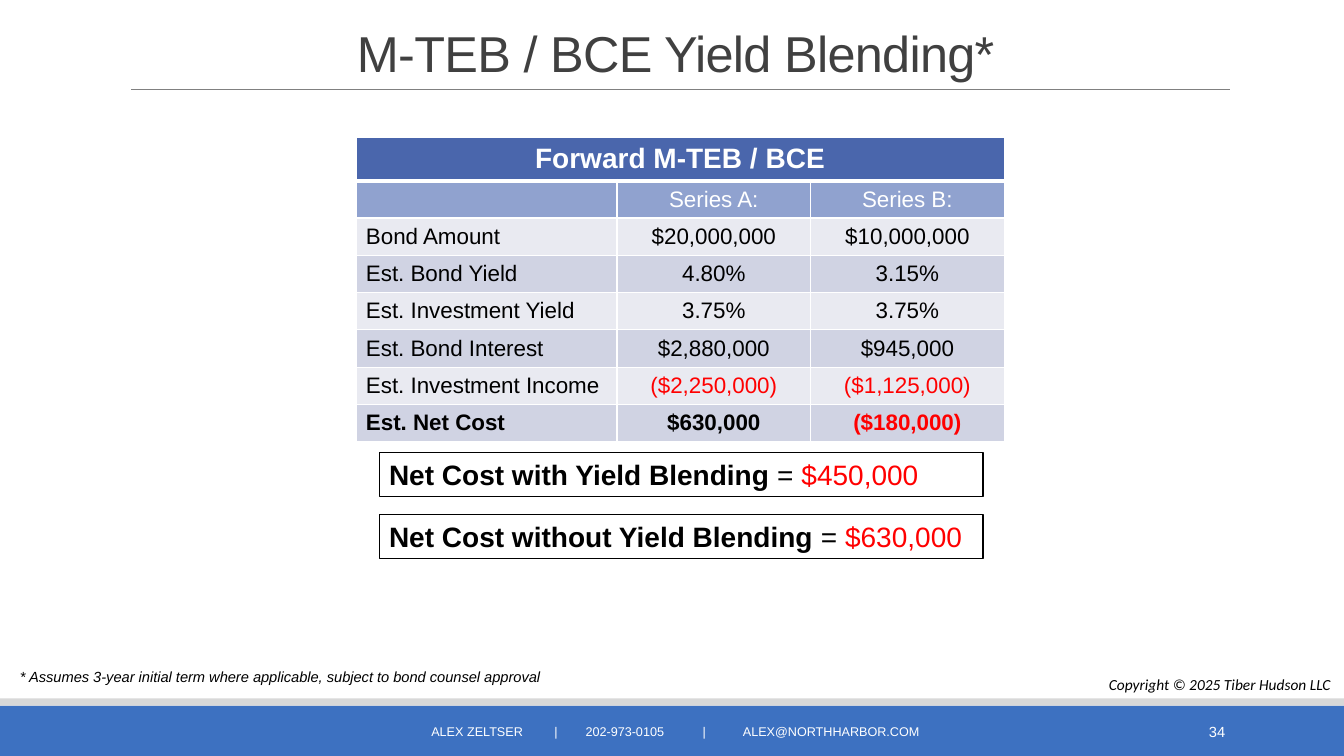
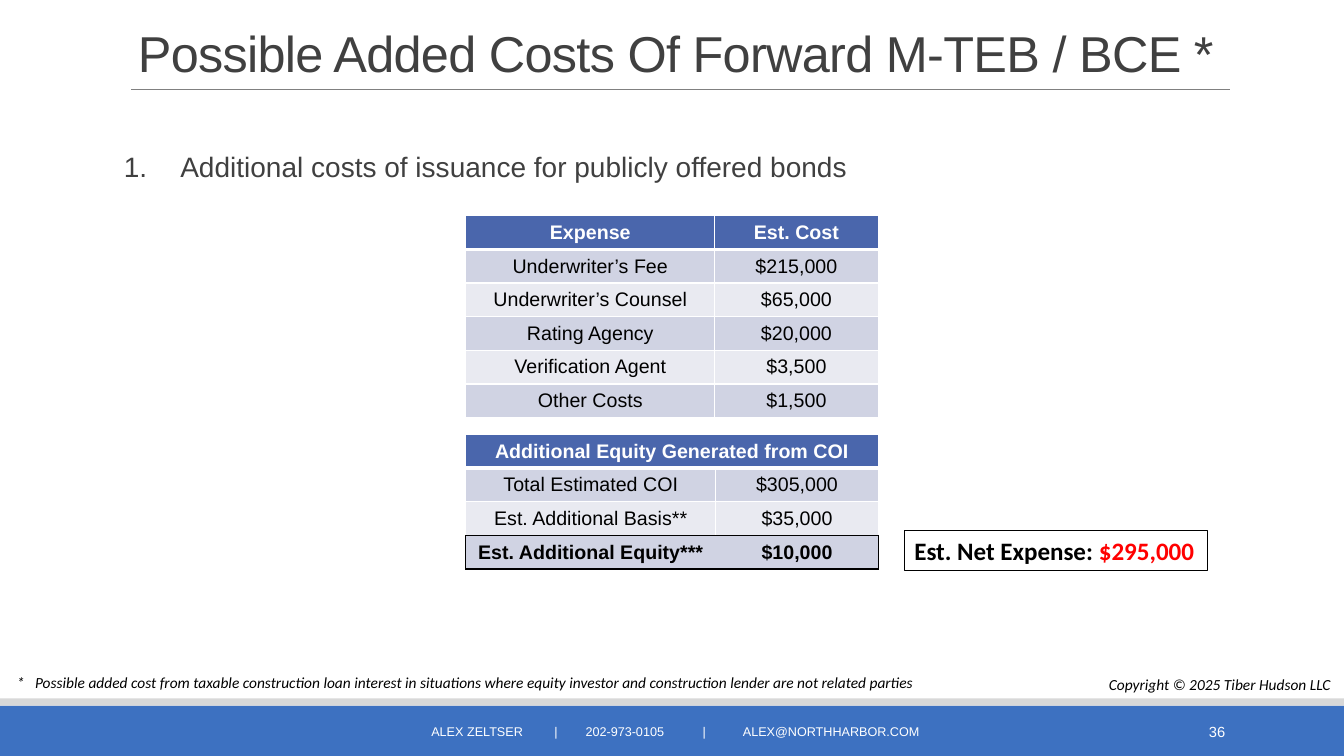
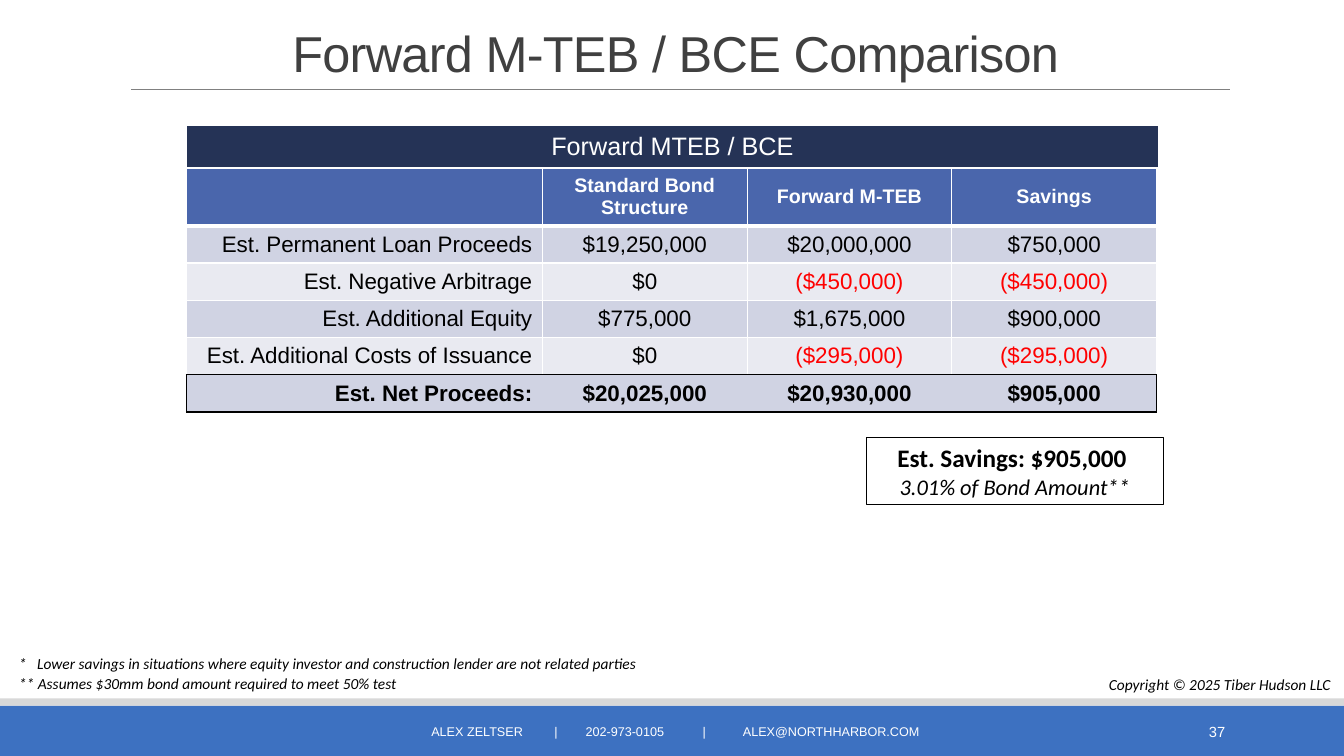
from lxml.etree import SubElement
from pptx import Presentation
from pptx.dml.color import RGBColor
from pptx.enum.shapes import MSO_CONNECTOR, MSO_SHAPE
from pptx.enum.text import MSO_ANCHOR, PP_ALIGN
from pptx.oxml.ns import qn
from pptx.util import Inches, Pt

COLORS = {
    "band": "3D71C1", "strip": "D8D8D8", "rule": "808080", "title": "404040",
    "black": "000000", "white": "FFFFFF", "red": "FF0000", "navy": "253356",
    "head": "4A66AC", "sub": "90A2CF", "dark": "D0D3E3", "light": "E9EAF1",
}
ALIGN = {"l": PP_ALIGN.LEFT, "c": PP_ALIGN.CENTER, "r": PP_ALIGN.RIGHT}

CONTACT = "ALEX ZELTSER\t|\t202-973-0105\t|\tALEX@NORTHHARBOR.COM"
CONTACT_TABS = [1.22, 1.53, 2.69, 3.09]
COPYRIGHT = "Copyright © 2025 Tiber Hudson LLC"

ARIAL_20 = {"name": "Arial", "size": 20}
NOTE = {"name": "Calibri", "size": 11, "italic": True}
ARIAL_NOTE = {"name": "Arial", "size": 10.5, "italic": True}
CALLOUT = {"name": "Calibri", "size": 18, "bold": True}
EXPENSE = {**CALLOUT, "size": 17.9}


def net_cost(label, amount):
    return [[(label, {**ARIAL_20, "bold": True}), (" = ", ARIAL_20),
             (amount, {**ARIAL_20, "color": "red"})]]


SLIDES = [
    {
        "title": "M-TEB / BCE Yield Blending*",
        "number": "34",
        "tables": [{
            "at": (3.53, 1.36), "cols": [2.59, 1.92, 1.92],
            "heights": (0.43, 0.37), "sizes": (20, 16),
            "first": "l", "span": True, "sub": True, "total": True,
            "rows": [
                ("Forward M-TEB / BCE", "", ""),
                ("", "Series A:", "Series B:"),
                ("Bond Amount", "$20,000,000", "$10,000,000"),
                ("Est. Bond Yield", "4.80%", "3.15%"),
                ("Est. Investment Yield", "3.75%", "3.75%"),
                ("Est. Bond Interest", "$2,880,000", "$945,000"),
                ("Est. Investment Income", "($2,250,000)", "($1,125,000)"),
                ("Est. Net Cost", "$630,000", "($180,000)"),
            ],
        }],
        "boxes": [
            ((3.76, 4.49, 5.99, 0.44), "l",
             net_cost("Net Cost with Yield Blending", "$450,000")),
            ((3.76, 5.1, 5.99, 0.44), "l",
             net_cost("Net Cost without Yield Blending", "$630,000")),
        ],
        "notes": [(0.1, 6.58, ARIAL_NOTE,
                   "* Assumes 3-year initial term where applicable, subject to bond counsel approval")],
    },
    {
        "title": "Possible Added Costs Of Forward M-TEB / BCE *",
        "number": "36",
        "item": "Additional costs of issuance for publicly offered bonds",
        "tables": [
            {
                "at": (4.62, 2.14), "cols": [2.47, 1.62],
                "heights": (0.33, 0.33), "sizes": (14, 14), "first": "c",
                "rows": [
                    ("Expense", "Est. Cost"),
                    ("Underwriter’s Fee", "$215,000"),
                    ("Underwriter’s Counsel", "$65,000"),
                    ("Rating Agency", "$20,000"),
                    ("Verification Agent", "$3,500"),
                    ("Other Costs", "$1,500"),
                ],
            },
            {
                "at": (4.62, 4.31), "cols": [2.48, 1.61],
                "heights": (0.33, 0.33), "sizes": (14, 14), "first": "c",
                "span": True, "total": True, "boxed": True,
                "rows": [
                    ("Additional Equity Generated from COI", ""),
                    ("Total Estimated COI", "$305,000"),
                    ("Est. Additional Basis**", "$35,000"),
                    ("Est. Additional Equity***", "$10,000"),
                ],
            },
        ],
        "boxes": [((8.97, 5.26, 3.01, 0.4), "l",
                   [[("Est. Net Expense: ", EXPENSE),
                     ("$295,000", {**EXPENSE, "color": "red"})]])],
        "notes": [(0.07, 6.63, NOTE,
                   "*\tPossible added cost from taxable construction loan interest in situations "
                   "where equity investor and construction lender are not related parties")],
    },
    {
        "title": "Forward M-TEB / BCE Comparison",
        "number": "37",
        "tables": [
            {
                "at": (1.85, 1.25), "cols": [9.64], "heights": (0.41, 0.41),
                "sizes": (18, 18), "first": "c", "banner": True,
                "rows": [("Forward MTEB / BCE",)],
            },
            {
                "at": (1.85, 1.67), "cols": [3.53, 2.03, 2.03, 2.03],
                "heights": (0.57, 0.37), "sizes": (14, 16),
                "first": "r", "total": True, "boxed": True,
                "rows": [
                    ("", "Standard Bond Structure", "Forward M-TEB", "Savings"),
                    ("Est. Permanent Loan Proceeds", "$19,250,000", "$20,000,000", "$750,000"),
                    ("Est. Negative Arbitrage", "$0", "($450,000)", "($450,000)"),
                    ("Est. Additional Equity", "$775,000", "$1,675,000", "$900,000"),
                    ("Est. Additional Costs of Issuance", "$0", "($295,000)", "($295,000)"),
                    ("Est. Net Proceeds:", "$20,025,000", "$20,930,000", "$905,000"),
                ],
            },
        ],
        "boxes": [((8.59, 4.34, 2.95, 0.67), "c",
                   [[("Est. Savings: $905,000 ", CALLOUT)],
                    [("3.01% of Bond Amount**",
                      {"name": "Calibri", "size": 16, "italic": True})]])],
        "notes": [
            (0.09, 6.44, NOTE, "*\tLower savings in situations where equity investor "
                               "and construction lender are not related parties"),
            (0.09, 6.64, NOTE, "** Assumes $30mm bond amount required to meet 50% test"),
        ],
    },
]


def rgb(name):
    return RGBColor.from_string(COLORS[name])


def add_run(p, text, fmt):
    r = p.add_run()
    r.text = text
    values = {"color": "black", **fmt}
    r.font.color.rgb = rgb(values.pop("color"))
    for key, value in values.items():
        setattr(r.font, key, Pt(value) if key == "size" else value)
    return r


def write(tf, paragraphs, align="l"):
    for i, runs in enumerate(paragraphs):
        p = tf.add_paragraph() if i else tf.paragraphs[0]
        p.alignment = ALIGN[align]
        for text, fmt in runs:
            add_run(p, text, fmt)
    return tf.paragraphs[0]


def add_text(s, at, text, fmt, align="l", anchor=MSO_ANCHOR.TOP, wrap=True):
    tf = s.shapes.add_textbox(*map(Inches, at)).text_frame
    tf.word_wrap = wrap
    tf.vertical_anchor = anchor
    return write(tf, [[(text, fmt)]], align)


def hang(p, indent):
    pPr = p._p.get_or_add_pPr()
    pPr.set("marL", str(Inches(indent)))
    pPr.set("indent", str(-Inches(indent)))
    return pPr


def add_tabs(p, stops):
    tabs = SubElement(p._p.get_or_add_pPr(), qn("a:tabLst"))
    for stop in stops:
        SubElement(tabs, qn("a:tab"), pos=str(Inches(stop)), algn="l")


def add_rect(s, at, fill=None, line=None):
    sp = s.shapes.add_shape(MSO_SHAPE.RECTANGLE, *map(Inches, at))
    sp.shadow.inherit = False
    if fill:
        sp.fill.solid()
        sp.fill.fore_color.rgb = rgb(fill)
    else:
        sp.fill.background()
    if line:
        sp.line.color.rgb = rgb(line)
        sp.line.width = Pt(0.75)
    else:
        sp.line.fill.background()
    return sp


def add_frame(s, title, number):
    add_rect(s, (0, 7, 13.33, 0.5), "band")
    add_rect(s, (0, 6.93, 13.33, 0.07), "strip")
    rule = s.shapes.add_connector(MSO_CONNECTOR.STRAIGHT, Inches(1.3), Inches(0.89),
                                  Inches(12.2), Inches(0.89))
    rule.line.color.rgb = rgb("rule")
    rule.line.width = Pt(0.5)
    SubElement(rule._element.spPr, qn("a:effectLst"))

    p = add_text(s, (1.2, 0.31, 11, 0.52), title,
                 {"name": "Arial", "size": 36, "color": "title"}, "c", MSO_ANCHOR.MIDDLE)
    p.line_spacing = 0.85
    p.runs[0]._r.get_or_add_rPr().set("spc", "-50")

    small = {"name": "Arial", "color": "white"}
    add_text(s, (10.82, 7.06, 1.43, 0.4), number, {**small, "size": 10.5}, "r", MSO_ANCHOR.MIDDLE)
    p = add_text(s, (4.18, 7.06, 5.27, 0.4), CONTACT, {**small, "size": 9},
                 anchor=MSO_ANCHOR.MIDDLE)
    add_tabs(p, CONTACT_TABS)
    add_text(s, (10.9, 6.65, 2.42, 0.29), COPYRIGHT, NOTE, wrap=False)


def set_borders(cell, edges):
    tcPr = cell._tc.get_or_add_tcPr()
    for i, (side, edge) in enumerate(zip("LRTB", edges)):
        color, width = edge or (None, 0)
        ln = tcPr.makeelement(qn("a:ln" + side), {"w": str(Pt(width))})
        if color:
            SubElement(SubElement(ln, qn("a:solidFill")), qn("a:srgbClr"), val=COLORS[color])
        else:
            SubElement(ln, qn("a:noFill"))
        tcPr.insert(i, ln)


def cell_edges(spec, i, j):
    if spec.get("banner"):
        return [None] * 4
    last = len(spec["rows"]) - 1
    boxed = spec.get("boxed")

    def across(k):
        if boxed and k >= last:
            return "black", 1
        return "white", 3 if k == 1 else 1

    def down(k):
        if boxed and i == last:
            return ("black", 1) if k in (0, len(spec["cols"])) else None
        return "white", 1

    return [down(j), down(j + 1), across(i), across(i + 1)]


def add_grid(s, spec):
    rows, cols = spec["rows"], spec["cols"]
    head_height, body_height = spec["heights"]
    heights = [head_height] + [body_height] * (len(rows) - 1)
    at = (*spec["at"], sum(cols), sum(heights))
    table = s.shapes.add_table(len(rows), len(cols), *map(Inches, at)).table
    table.first_row = table.horz_banding = False
    for column, width in zip(table.columns, cols):
        column.width = Inches(width)

    for i, row in enumerate(rows):
        table.rows[i].height = Inches(heights[i])
        is_head, is_sub = i == 0, i == 1 and spec.get("sub")
        is_total = i == len(rows) - 1 and spec.get("total")
        if is_head:
            fill = "navy" if spec.get("banner") else "head"
        else:
            fill = "sub" if is_sub else ("light", "dark")[i % 2]
        size = spec["sizes"][0 if is_head else 1]
        bold = bool(is_total or is_head and not spec.get("banner"))
        for j, text in enumerate(row):
            cell = table.cell(i, j)
            cell.vertical_anchor = MSO_ANCHOR.MIDDLE
            cell.fill.solid()
            cell.fill.fore_color.rgb = rgb(fill)
            set_borders(cell, cell_edges(spec, i, j))
            p = cell.text_frame.paragraphs[0]
            p.alignment = ALIGN["c" if is_head or j else spec["first"]]
            if text:
                color = "white" if is_head or is_sub else "red" if text[0] == "(" else "black"
                add_run(p, text, {"name": "Arial", "size": size, "bold": bold, "color": color})
            else:
                SubElement(p._p, qn("a:endParaRPr"), sz=str(size * 100))
    if spec.get("span"):
        table.cell(0, 0).merge(table.cell(0, len(cols) - 1))


def add_item(s, text):
    p = add_text(s, (1.13, 1.47, 11.49, 0.5), text, {**ARIAL_20, "color": "title"})
    p.line_spacing = 0.9
    SubElement(hang(p, 0.56), qn("a:buAutoNum"), type="arabicPeriod")


def build(prs, content):
    s = prs.slides.add_slide(prs.slide_layouts[6])
    add_frame(s, content["title"], content["number"])
    if "item" in content:
        add_item(s, content["item"])
    for spec in content["tables"]:
        add_grid(s, spec)
    for at, align, paragraphs in content["boxes"]:
        tf = add_rect(s, at, line="black").text_frame
        tf.word_wrap = True
        tf.vertical_anchor = MSO_ANCHOR.TOP
        write(tf, paragraphs, align)
    for left, top, fmt, text in content["notes"]:
        p = add_text(s, (left, top, 10.5, 0.29), text, fmt)
        if "\t" in text:
            hang(p, 0.18)


def main():
    prs = Presentation()
    prs.slide_width, prs.slide_height = Inches(13.33), Inches(7.5)
    for content in SLIDES:
        build(prs, content)
    prs.save("out.pptx")


if __name__ == "__main__":
    main()
